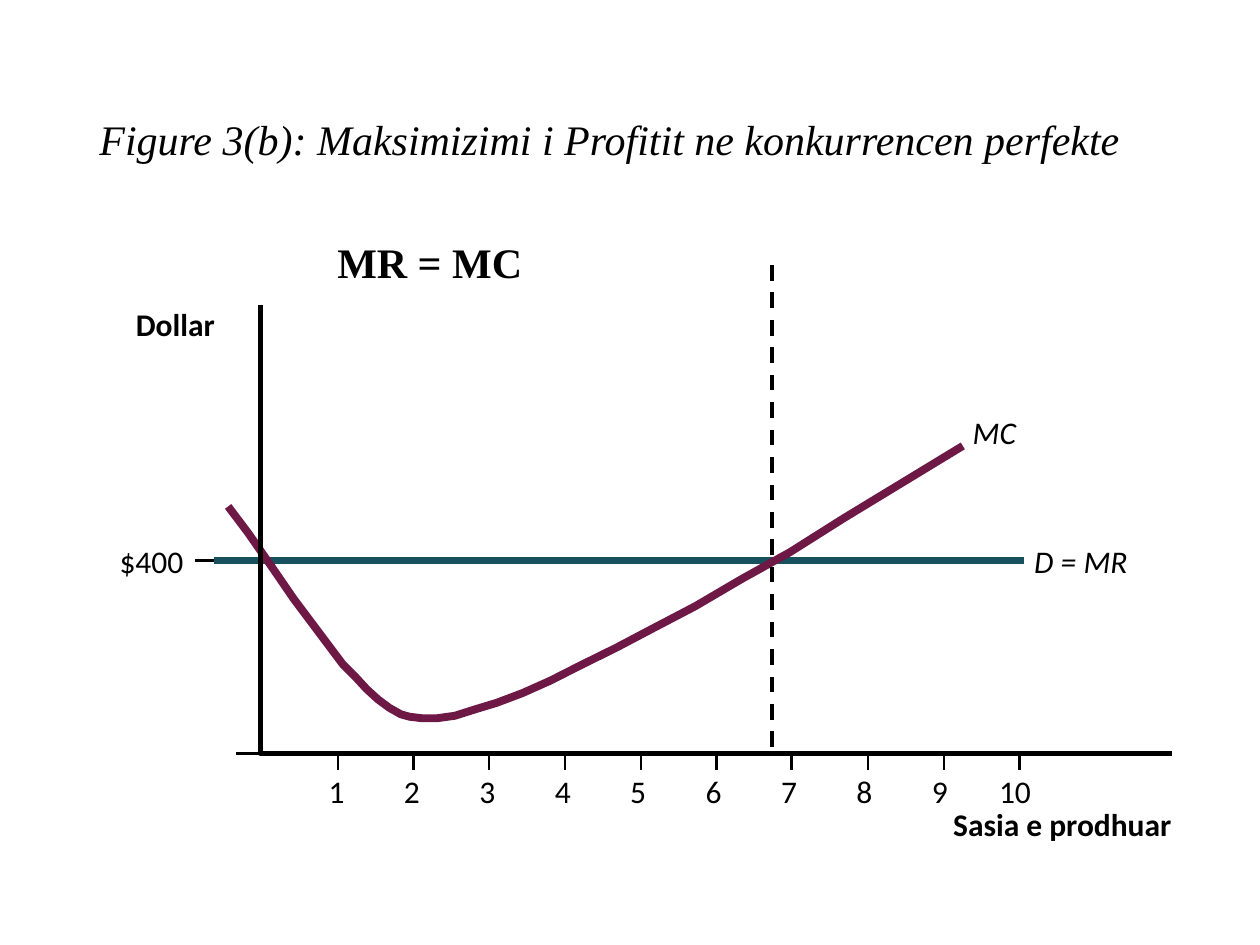
import pptx
import pptx.util
import pptx.dml.color
import pptx.enum.dml
import pptx.enum.shapes
import pptx.enum.text
import lxml.etree

Cm = pptx.util.Cm
Align = pptx.enum.text.PP_ALIGN
COLORS = {"ink": "000000", "revenue": "17515E", "cost": "6D1845"}

presentation = pptx.Presentation()
presentation.slide_width = Cm(25.4)
presentation.slide_height = Cm(19.05)
slide = presentation.slides.add_slide(presentation.slide_layouts[5])


def write_text(text, left, top, width, height, shape=None, size=18, font="Calibri",
               bold=False, italic=False, align=Align.LEFT, inset=0):
    if shape is None:
        shape = slide.shapes.add_textbox(0, 0, 0, 0)
        frame = shape.text_frame
        frame.word_wrap = False
        frame.auto_size = pptx.enum.text.MSO_AUTO_SIZE.SHAPE_TO_FIT_TEXT
        frame.margin_left = frame.margin_right = Cm(inset)
        frame.margin_top = frame.margin_bottom = Cm(inset / 2)
    shape.left, shape.top, shape.width, shape.height = Cm(left), Cm(top), Cm(width), Cm(height)
    paragraph = shape.text_frame.paragraphs[0]
    paragraph.alignment = align
    run = paragraph.add_run()
    run.text = text
    run.font.size = pptx.util.Pt(size)
    run.font.name = font
    run.font.bold = bold
    run.font.italic = italic
    run.font.color.rgb = pptx.dml.color.RGBColor.from_string(COLORS["ink"])
    return shape


def draw_line(points, color="ink", width=1.25):
    if len(points) == 2:
        (x1, y1), (x2, y2) = points
        shape = slide.shapes.add_connector(
            pptx.enum.shapes.MSO_CONNECTOR.STRAIGHT, Cm(x1), Cm(y1), Cm(x2), Cm(y2))
        lxml.etree.SubElement(shape._element.spPr, pptx.oxml.ns.qn("a:effectLst"))
    else:
        start, *rest = [(round(x * 100), round(y * 100)) for x, y in points]
        builder = slide.shapes.build_freeform(*start, scale=Cm(0.01))
        builder.add_line_segments(rest, close=False)
        shape = builder.convert_to_shape()
        shape.fill.background()
        shape.shadow.inherit = False
    shape.line.color.rgb = pptx.dml.color.RGBColor.from_string(COLORS[color])
    shape.line.width = pptx.util.Pt(width)
    return shape


title = write_text("Figure 3(b): Maksimizimi i Profitit ne konkurrencen perfekte",
                   1.75, 1.02, 21.9, 3.68, shape=slide.shapes.title,
                   size=24, font="Times New Roman", italic=True)
title.text_frame.vertical_anchor = pptx.enum.text.MSO_ANCHOR.MIDDLE
title.text_frame.paragraphs[0].line_spacing = 0.9

write_text("MC", 19.61, 8.33, 0.99, 0.76, italic=True)
write_text("$400", 2.41, 10.92, 1.42, 0.76)
write_text("D = MR", 20.85, 10.92, 2.16, 0.76, italic=True)

price_y = 11.3
draw_line([(4.32, price_y), (3.94, price_y)])
draw_line([(4.32, price_y), (20.65, price_y)], color="revenue", width=4.5)

marginal_cost = [
    (4.6, 10.21), (5, 10.74), (5.46, 11.4), (5.92, 12.07), (6.43, 12.75), (6.91, 13.39),
    (7.16, 13.64), (7.39, 13.89), (7.62, 14.1), (7.85, 14.27), (8.08, 14.4), (8.26, 14.45),
    (8.51, 14.48), (8.81, 14.48), (9.17, 14.43), (9.58, 14.3), (10.01, 14.17), (10.54, 13.97),
    (11.1, 13.72), (11.71, 13.41), (12.42, 13.06), (13.16, 12.67), (14.02, 12.22),
    (14.94, 11.68), (15.93, 11.13), (16.99, 10.46), (19.41, 8.99),
]
draw_line(marginal_cost, color="cost", width=4.5)

write_text("Sasia e prodhuar", 18.67, 16.23, 4.95, 0.71, bold=True, align=Align.RIGHT)
write_text("Dollar", 2.74, 6.15, 1.73, 0.71, bold=True)

axis_x, axis_y = 5.25, 15.19
tick_top, tick_bottom = 15.17, 15.52
for quantity in range(1, 11):
    tick_x = 6.81 + 1.527 * (quantity - 1)
    draw_line([(tick_x, tick_bottom), (tick_x, tick_top)])
    label = str(quantity)
    label_width = 0.33 * len(label)
    label_center = 6.79 + 1.52 * (quantity - 1)
    write_text(label, label_center - label_width / 2, 15.57, label_width, 0.69)

draw_line([(15.95, tick_top), (15.95, tick_bottom)])
draw_line([(axis_x, axis_y), (4.75, axis_y)])
draw_line([(axis_x, 6.15), (axis_x, axis_y), (23.62, axis_y)], width=2.5)

optimum = draw_line([(15.57, 15.06), (15.57, 5.21)], width=2.25)
optimum.line.dash_style = pptx.enum.dml.MSO_LINE.DASH
write_text("MR = MC", 6.55, 4.65, 4.34, 1.27, size=24, font="Times New Roman",
           bold=True, inset=0.25)

presentation.save("out.pptx")
